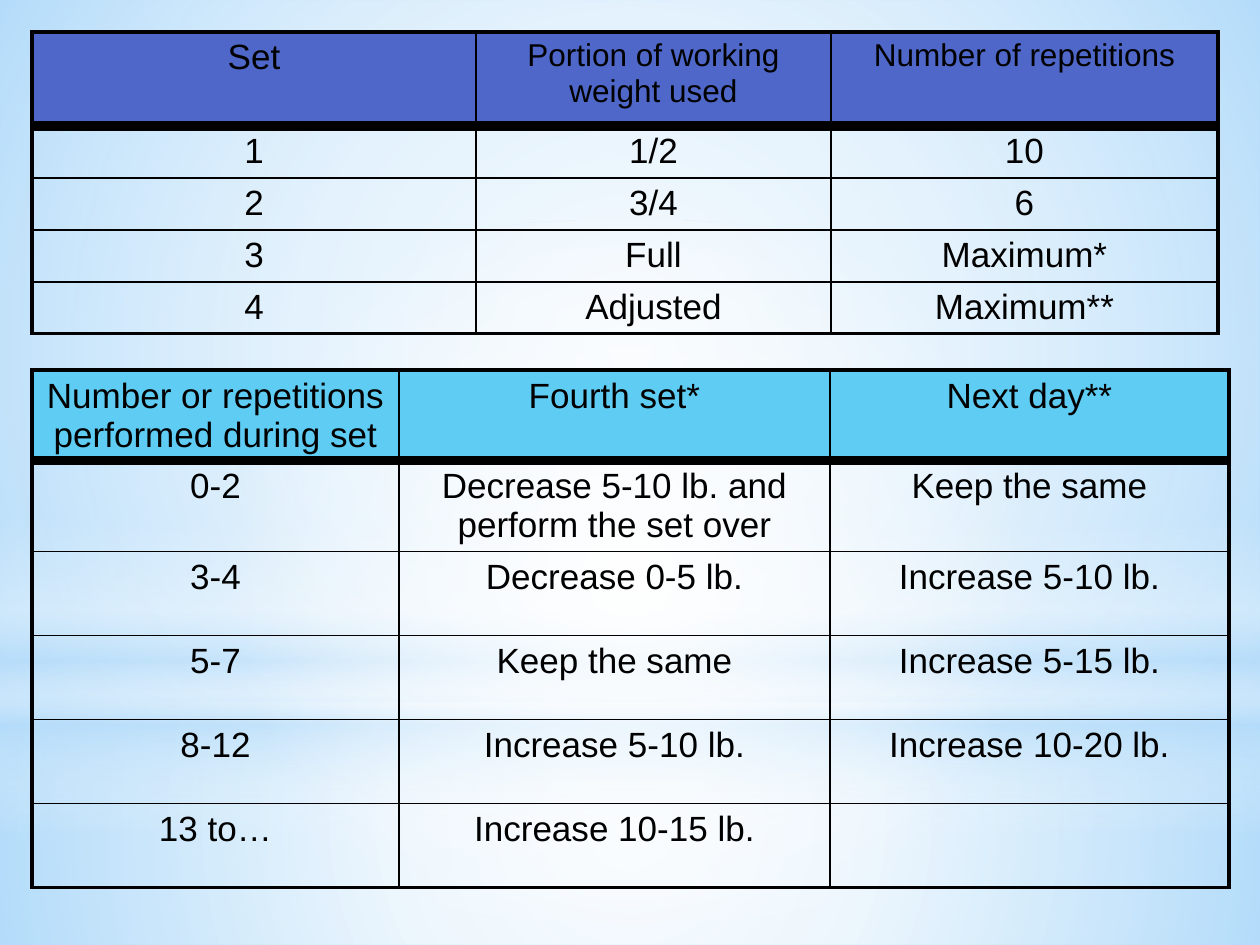
from lxml import etree
from pptx import Presentation
from pptx.dml.color import RGBColor
from pptx.enum.shapes import MSO_SHAPE
from pptx.enum.text import PP_ALIGN
from pptx.oxml import parse_xml
from pptx.oxml.ns import nsdecls, qn
from pptx.util import Pt

RECT, OVAL = MSO_SHAPE.RECTANGLE, MSO_SHAPE.OVAL
CENTER = PP_ALIGN.CENTER
BLACK = RGBColor(0, 0, 0)
WHITE = RGBColor(0xFF, 0xFF, 0xFF)
SKY = RGBColor(0xB4, 0xDC, 0xFA)
INDIGO = RGBColor(0x4E, 0x67, 0xC8)
CYAN = RGBColor(0x5E, 0xCC, 0xF3)
FONT = "Arial"
THIN, EDGE, HEAVY = 1, 2.25, 6


def px(n):
    return round(n * 914400 / 126)


def write(frame, text, size=20, color=BLACK, align=CENTER):
    para = frame.paragraphs[0]
    para.alignment = align
    run = para.add_run()
    run.text = text
    run.font.name, run.font.size = FONT, Pt(size)
    run.font.color.rgb = color


class Page:
    def __init__(self, deck, back):
        self.slide = deck.slides.add_slide(deck.slide_layouts[6])
        fill = self.slide.background.fill
        fill.solid()
        fill.fore_color.rgb = back

    def glow(self, kind, box, stops, radial=True):
        """Borderless shape; stops are (percent, color, opacity percent)."""
        shape = self.slide.shapes.add_shape(kind, *map(px, box))
        shape.shadow.inherit = False
        shape.line.fill.background()
        marks = "".join(
            f'<a:gs pos="{pos * 1000}"><a:srgbClr val="{color}">'
            f'<a:alpha val="{alpha * 1000}"/></a:srgbClr></a:gs>'
            for pos, color, alpha in stops)
        shade = ('<a:path path="circle"><a:fillToRect l="50000" t="50000" '
                 'r="50000" b="50000"/></a:path>' if radial
                 else '<a:lin ang="5400000" scaled="0"/>')
        grad = parse_xml(f'<a:gradFill {nsdecls("a")} rotWithShape="1">'
                         f'<a:gsLst>{marks}</a:gsLst>{shade}</a:gradFill>')
        shape._element.spPr.find(qn("a:prstGeom")).addnext(grad)

    def border(self, cell, widths):
        """Draw the left, right, top and bottom lines of a cell."""
        props = cell._tc.get_or_add_tcPr()
        for spot, (side, width) in enumerate(zip("LRTB", widths)):
            line = etree.Element(qn(f"a:ln{side}"), w=str(Pt(width)))
            fill = etree.SubElement(line, qn("a:solidFill"))
            etree.SubElement(fill, qn("a:srgbClr"), val=str(BLACK))
            props.insert(spot, line)

    def table(self, left, top, cols, rows, data, color, sizes=(20, 20, 20)):
        """Table with a filled head row; sizes are those of the head."""
        box = (left, top, sum(cols), sum(rows))
        grid = self.slide.shapes.add_table(
            len(rows), len(cols), *map(px, box)).table
        grid.first_row = grid.horz_banding = False
        for col, width in zip(grid.columns, cols):
            col.width = px(width)
        for row, height in zip(grid.rows, rows):
            row.height = px(height)
        end, last = len(rows) - 1, len(cols) - 1
        for r, line in enumerate(data):
            for c, text in enumerate(line):
                cell = grid.cell(r, c)
                if r == 0:
                    cell.fill.solid()
                    cell.fill.fore_color.rgb = color
                else:
                    cell.fill.background()
                self.border(cell, (
                    EDGE if c == 0 else THIN,
                    EDGE if c == last else THIN,
                    {0: EDGE, 1: HEAVY}.get(r, THIN),
                    {0: HEAVY, end: EDGE}.get(r, THIN)))
                if text:
                    write(cell.text_frame, text, sizes[c] if r == 0 else 20)


def main():
    deck = Presentation()
    deck.slide_width, deck.slide_height = px(1260), px(945)
    page = Page(deck, SKY)

    # Soft backdrop
    page.glow(RECT, (0, 703, 1260, 242),
              [(0, WHITE, 91), (37, WHITE, 76), (100, SKY, 79)])
    page.glow(RECT, (0, 0, 1260, 703),
              [(0, WHITE, 89), (48, WHITE, 62), (100, SKY, 79)])
    page.glow(RECT, (0, 519, 1260, 315),
              [(0, WHITE, 0), (29, WHITE, 30), (45, SKY, 40),
               (55, WHITE, 26), (65, SKY, 60), (100, WHITE, 0)], radial=False)
    page.glow(OVAL, (0, 220, 1260, 703), [(0, WHITE, 100), (56, WHITE, 0)])

    # Sets of the workout
    page.table(32, 32, (444, 355, 387), (94, 52, 52, 52, 51), [
        ("Set", "Portion of working weight used", "Number of repetitions"),
        ("1", "1/2", "10"),
        ("2", "3/4", "6"),
        ("3", "Full", "Maximum*"),
        ("4", "Adjusted", "Maximum**"),
    ], INDIGO, sizes=(20, 18, 18))

    # Weight adjustments
    page.table(32, 370, (367, 431, 399), (90, 91, 84, 84, 84, 84), [
        ("Number or repetitions performed during set", "Fourth set*",
         "Next day**"),
        ("0-2", "Decrease 5-10 lb. and perform the set over",
         "Keep the same"),
        ("3-4", "Decrease 0-5 lb.", "Increase 5-10 lb."),
        ("5-7", "Keep the same", "Increase 5-15 lb."),
        ("8-12", "Increase 5-10 lb.", "Increase 10-20 lb."),
        ("13 to…", "Increase 10-15 lb.", ""),
    ], CYAN)

    deck.save("out.pptx")


if __name__ == "__main__":
    main()
